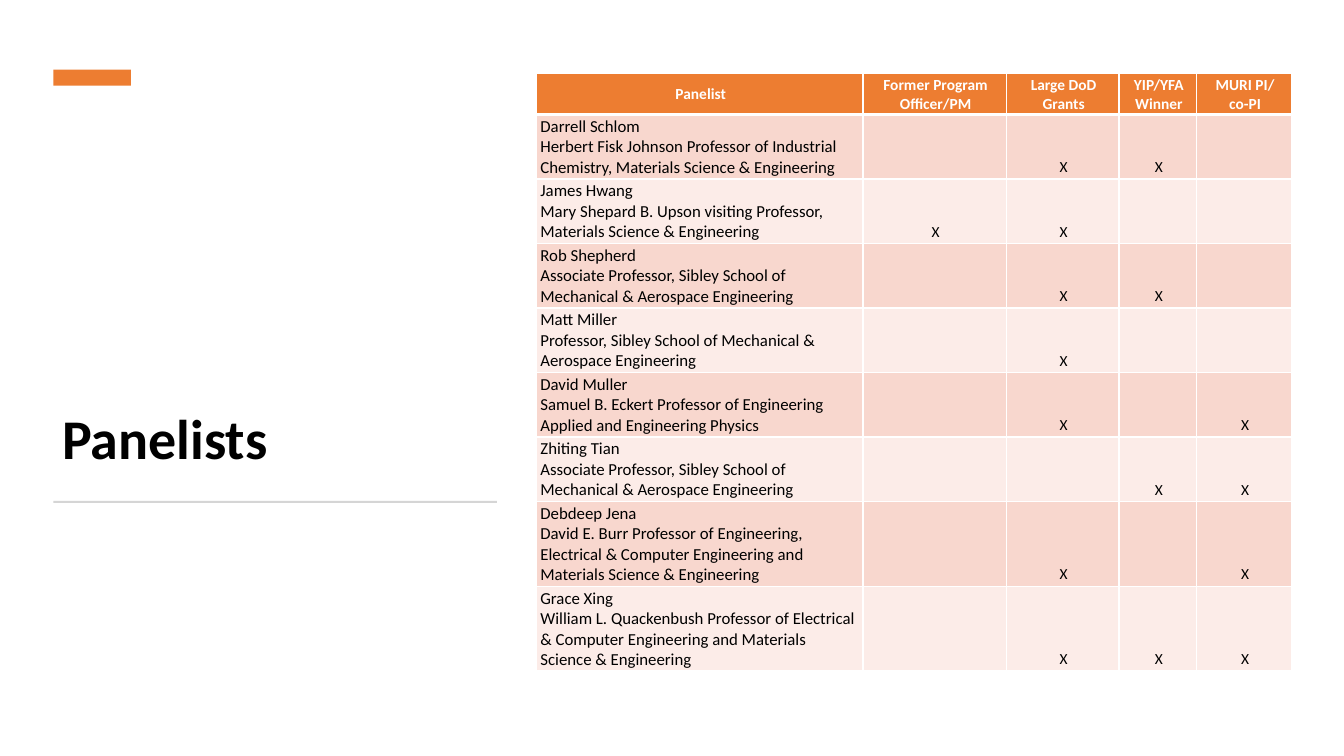
from dataclasses import dataclass

from lxml.etree import SubElement
from pptx import Presentation
from pptx.dml.color import RGBColor as RGB
from pptx.enum.shapes import MSO_SHAPE as SHAPE
from pptx.enum.text import MSO_ANCHOR as ANCHOR, PP_ALIGN as ALIGN
from pptx.oxml.ns import qn
from pptx.util import Inches, Pt


@dataclass(frozen=True)
class Theme:
    font: str = "Calibri"
    accent: RGB = RGB(0xED, 0x7D, 0x31)
    rule: RGB = RGB(0xD5, 0xD5, 0xD5)
    bands: tuple = (RGB(0xF8, 0xD7, 0xCE), RGB(0xFC, 0xEC, 0xE8))
    black: RGB = RGB(0, 0, 0)
    white: RGB = RGB(0xFF, 0xFF, 0xFF)
    title_size: int = 40
    name_size: int = 12
    mark_size: int = 11


THEME = Theme()

HEADERS = ["Panelist", "Former Program Officer/PM", "Large DoD Grants",
           "YIP/YFA Winner", "MURI PI/\vco-PI"]
COL_WIDTHS = [3.24, 1.42, 1.12, 0.77, 0.94]
ROW_HEIGHTS = [0.4] + [0.56] * 6 + [0.73] * 2

# Name, position, and the numbers of the columns marked with an X
PANELISTS = [
    ("Darrell Schlom", "Herbert Fisk Johnson Professor of Industrial Chemistry, "
     "Materials Science & Engineering", {2, 3}),
    ("James Hwang", "Mary Shepard B. Upson visiting Professor, "
     "Materials Science & Engineering", {1, 2}),
    ("Rob Shepherd", "Associate Professor, Sibley School of "
     "Mechanical & Aerospace Engineering", {2, 3}),
    ("Matt Miller", "Professor, Sibley School of "
     "Mechanical & Aerospace Engineering", {2}),
    ("David Muller", "Samuel B. Eckert Professor of Engineering\n"
     "Applied and Engineering Physics", {2, 4}),
    ("Zhiting Tian", "Associate Professor, Sibley School of "
     "Mechanical & Aerospace Engineering", {3, 4}),
    ("Debdeep Jena", "David E. Burr Professor of Engineering, Electrical & Computer "
     "Engineering and Materials Science & Engineering", {2, 4}),
    ("Grace Xing", "William L. Quackenbush Professor of Electrical & Computer "
     "Engineering and Materials Science & Engineering", {2, 3, 4}),
]


def style_text(tf, size, color, bold=False, align=ALIGN.LEFT):
    for p in tf.paragraphs:
        p.alignment = align
        p.font.name = THEME.font
        p.font.size = Pt(size)
        p.font.bold = bold
        p.font.color.rgb = color


def add_title(s, text):
    tf = s.shapes.add_textbox(Inches(0.52), Inches(1.23), Inches(4.4), Inches(3.5)).text_frame
    tf.word_wrap = True
    tf.vertical_anchor = ANCHOR.BOTTOM
    tf.text = text
    tf.paragraphs[0].line_spacing = 0.9
    style_text(tf, THEME.title_size, THEME.black, bold=True)


def add_bar(s, left, top, width, height, color):
    sp = s.shapes.add_shape(SHAPE.RECTANGLE, Inches(left), Inches(top),
                            Inches(width), Inches(height))
    sp.shadow.inherit = False
    sp.fill.solid()
    sp.fill.fore_color.rgb = color
    sp.line.fill.background()


def set_borders(cell, top=1, bottom=1):
    tc_pr = cell._tc.get_or_add_tcPr()
    for side, width in (("L", 1), ("R", 1), ("T", top), ("B", bottom)):
        ln = SubElement(tc_pr, qn(f"a:ln{side}"), w=str(Pt(width)))
        fill = SubElement(ln, qn("a:solidFill"))
        SubElement(fill, qn("a:srgbClr"), val=str(THEME.white))


def fill_cell(cell, text, fill, anchor, **text_style):
    cell.margin_left = Inches(0.04)
    cell.margin_right = cell.margin_top = cell.margin_bottom = Inches(0.02)
    cell.vertical_anchor = anchor
    cell.text = text
    style_text(cell.text_frame, **text_style)
    cell.fill.solid()
    cell.fill.fore_color.rgb = fill


def add_panelist_table(s):
    table = s.shapes.add_table(len(ROW_HEIGHTS), len(COL_WIDTHS), Inches(5.32), Inches(0.73),
                               Inches(sum(COL_WIDTHS)), Inches(sum(ROW_HEIGHTS))).table
    for col, width in zip(table.columns, COL_WIDTHS):
        col.width = Inches(width)
    for row, height in zip(table.rows, ROW_HEIGHTS):
        row.height = Inches(height)

    # Header row, set off by a thicker line
    for c, header in enumerate(HEADERS):
        cell = table.cell(0, c)
        set_borders(cell, bottom=3)
        fill_cell(cell, header, THEME.accent, ANCHOR.MIDDLE, size=THEME.mark_size,
                  color=THEME.white, bold=True, align=ALIGN.CENTER)

    # One banded row per panelist
    for r, (name, position, marks) in enumerate(PANELISTS, start=1):
        band = THEME.bands[(r - 1) % 2]
        for c in range(len(HEADERS)):
            cell = table.cell(r, c)
            set_borders(cell, top=3 if r == 1 else 1)
            if c == 0:
                fill_cell(cell, f"{name}\n{position}", band, ANCHOR.BOTTOM,
                          size=THEME.name_size, color=THEME.black)
            else:
                fill_cell(cell, "X" if c in marks else "", band, ANCHOR.BOTTOM,
                          size=THEME.mark_size, color=THEME.black, align=ALIGN.CENTER)


def main():
    prs = Presentation()
    prs.slide_width, prs.slide_height = Inches(13.33), Inches(7.5)
    s = prs.slides.add_slide(prs.slide_layouts[6])

    # Title side
    add_title(s, "Panelists")
    add_bar(s, 0.53, 0.69, 0.77, 0.16, THEME.accent)
    add_bar(s, 0.53, 4.97, 4.4, 0.02, THEME.rule)

    # Table side
    add_panelist_table(s)
    prs.save("out.pptx")


if __name__ == "__main__":
    main()
